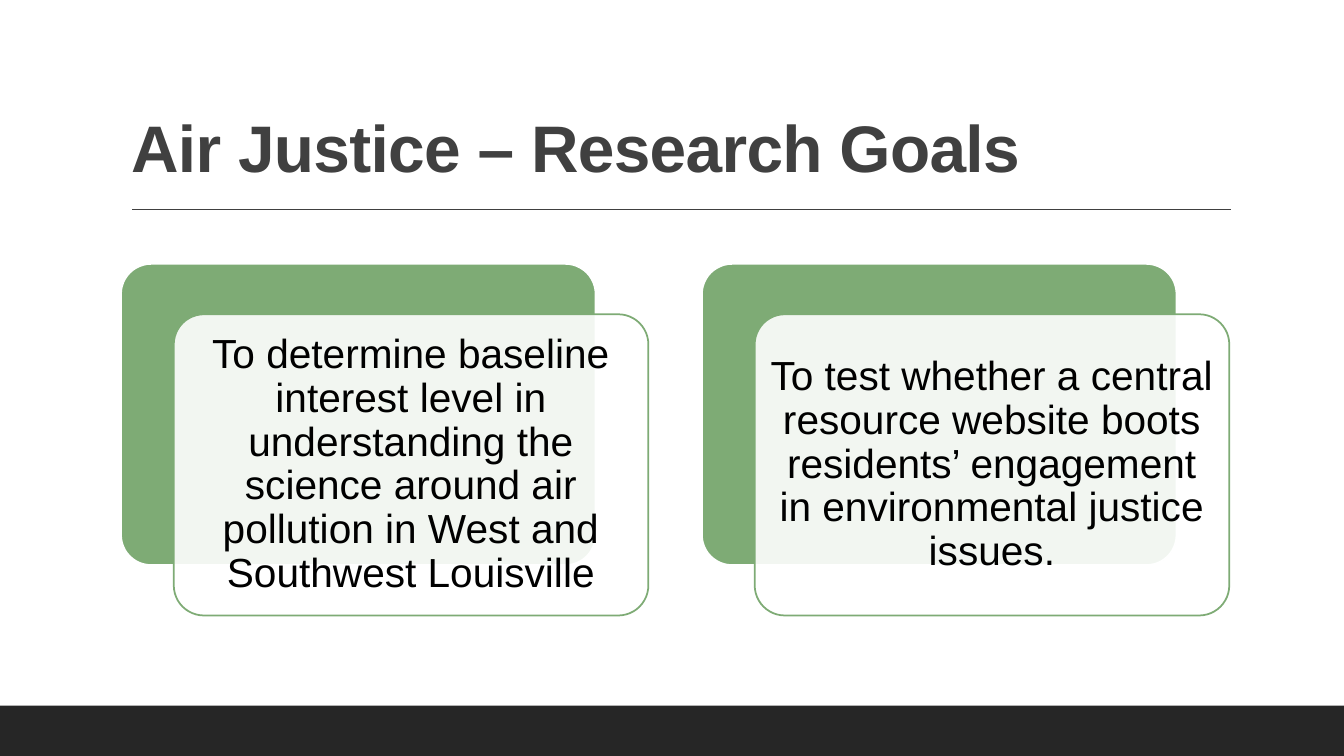
from dataclasses import dataclass

from lxml import etree
from pptx import Presentation
from pptx.dml.color import RGBColor
from pptx.enum.shapes import MSO_CONNECTOR, MSO_SHAPE
from pptx.enum.text import MSO_ANCHOR, MSO_AUTO_SIZE, PP_ALIGN
from pptx.oxml.ns import qn
from pptx.util import Cm, Pt

RECT, ROUND = MSO_SHAPE.RECTANGLE, MSO_SHAPE.ROUNDED_RECTANGLE
STRAIGHT = MSO_CONNECTOR.STRAIGHT
MIDDLE, BOTTOM = MSO_ANCHOR.MIDDLE, MSO_ANCHOR.BOTTOM
LEFT, CENTER = PP_ALIGN.LEFT, PP_ALIGN.CENTER
FIXED = MSO_AUTO_SIZE.NONE

WIDTH, HEIGHT = 33.87, 19.05
CARD_W, CARD_H = 11.96, 7.59
CARD_X, CARD_Y, CARD_STEP = 3.05, 6.65, 14.64
SHIFT_X, SHIFT_Y = 1.33, 1.27

GOALS = [
    "To determine baseline interest level in understanding the science "
    "around air pollution in West and Southwest Louisville",
    "To test whether a central resource website boots residents’ "
    "engagement in environmental justice issues.",
]


@dataclass
class Theme:
    font: str = "Arial"
    white: str = "FFFFFF"
    ink: str = "000000"
    gray: str = "404040"
    dark: str = "262626"
    green: str = "7EAB75"
    head: int = 47
    body: int = 29
    rule: float = 1
    edge: float = 1.25


class Deck:
    def __init__(self, theme):
        self.theme = theme
        self.file = Presentation()
        self.file.slide_width, self.file.slide_height = Cm(WIDTH), Cm(HEIGHT)
        self.slide = self.file.slides.add_slide(self.file.slide_layouts[5])
        self.paint(self.slide.background.fill, theme.white)

    def paint(self, fill, color):
        fill.solid()
        fill.fore_color.rgb = RGBColor.from_string(color)

    def label(self, frame, text, size, color, align, bold=False):
        frame.word_wrap = True
        frame.auto_size = FIXED
        frame.text = text
        para = frame.paragraphs[0]
        para.alignment = align
        para.line_spacing = 0.9
        font = para.runs[0].font
        font.name, font.size, font.bold = self.theme.font, Pt(size), bold
        font.color.rgb = RGBColor.from_string(color)

    def title(self, text, x, y, w, h):
        shape = self.slide.shapes.title
        shape.left, shape.top, shape.width, shape.height = map(Cm, (x, y, w, h))
        frame = shape.text_frame
        frame.vertical_anchor = BOTTOM
        self.label(frame, text, self.theme.head, self.theme.gray, LEFT, True)
        run = frame.paragraphs[0].runs[0]
        run._r.get_or_add_rPr().set("spc", "-50")

    def rule(self, x, y, end):
        line = self.slide.shapes.add_connector(
            STRAIGHT, Cm(x), Cm(y), Cm(end), Cm(y))
        self.paint(line.line.fill, self.theme.gray)
        line.line.width = Pt(self.theme.rule)
        etree.SubElement(line._element.spPr, qn("a:effectLst"))

    def block(self, kind, x, y, w, h, fill, edge=None):
        shape = self.slide.shapes.add_shape(kind, *map(Cm, (x, y, w, h)))
        shape.shadow.inherit = False
        self.paint(shape.fill, fill)
        if edge:
            self.paint(shape.line.fill, edge)
            shape.line.width = Pt(self.theme.edge)
        else:
            shape.line.fill.background()
        return shape

    def panel(self, x, y, fill, edge):
        shape = self.block(ROUND, x, y, CARD_W, CARD_H, fill, edge)
        shape.adjustments[0] = 0.1
        return shape

    def card(self, text, x, y):
        """Draw a green panel with a see-through text panel shifted over it."""
        theme = self.theme
        self.panel(x, y, theme.green, theme.white)
        front = self.panel(x + SHIFT_X, y + SHIFT_Y, theme.white, theme.green)
        color = front._element.spPr.find(qn("a:solidFill"))[0]
        etree.SubElement(color, qn("a:alpha"), val="90000")
        frame = front.text_frame
        frame.vertical_anchor = MIDDLE
        frame.margin_left = frame.margin_right = Cm(0.08)
        frame.margin_top = frame.margin_bottom = Cm(0.08)
        self.label(frame, text, theme.body, theme.ink, CENTER)


def main():
    theme = Theme()
    deck = Deck(theme)
    deck.title("Air Justice – Research Goals", 3.05, 0.79, 27.94, 4.04)
    deck.rule(3.33, 5.28, 31.01)
    deck.block(RECT, 0, 17.78, WIDTH, 1.27, theme.dark)
    for i, goal in enumerate(GOALS):
        deck.card(goal, CARD_X + i * CARD_STEP, CARD_Y)
    deck.file.save("out.pptx")


if __name__ == "__main__":
    main()
